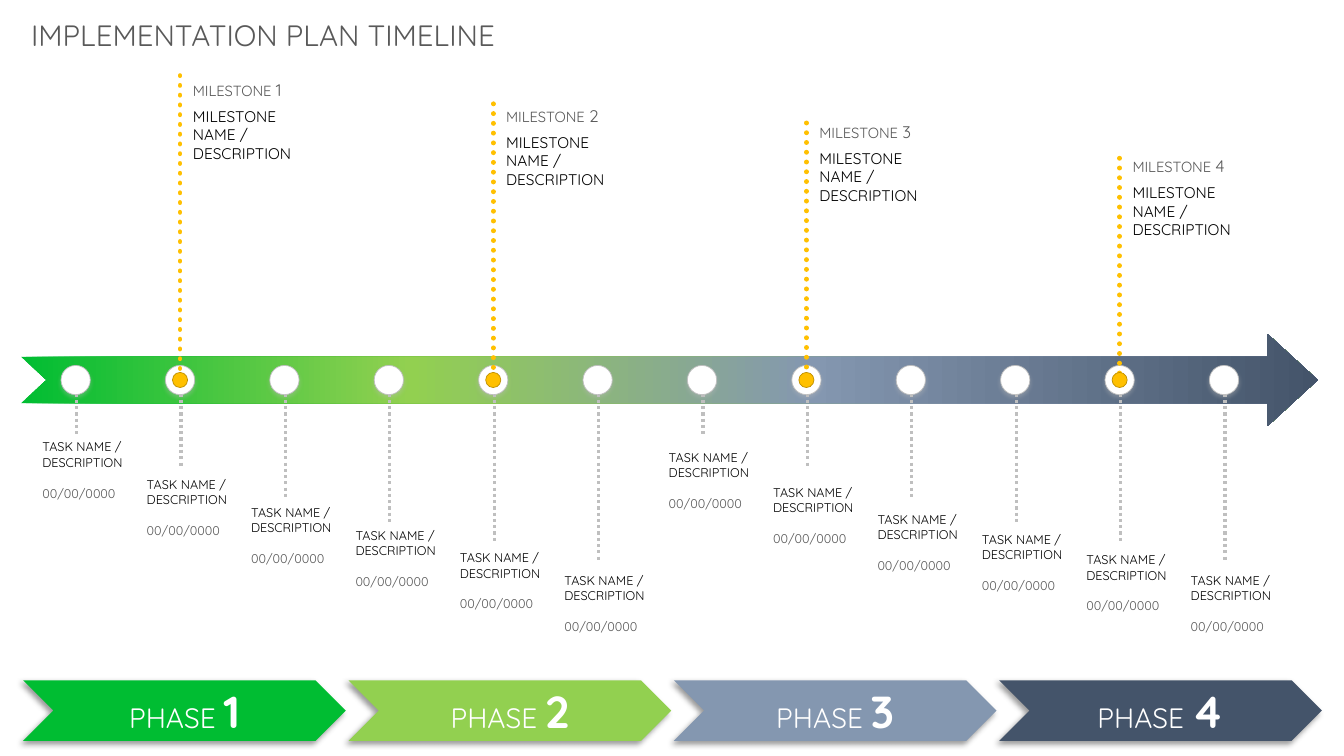
from dataclasses import dataclass
from typing import Any

from lxml import etree
from pptx import Presentation
from pptx import util as u
from pptx.dml.color import RGBColor
from pptx.enum import dml, shapes, text
from pptx.oxml.ns import qn

FONT = "Quicksand"
BLACK = RGBColor(0x00, 0x00, 0x00)
WHITE = RGBColor(0xFF, 0xFF, 0xFF)
GREY = RGBColor(0x59, 0x59, 0x59)
SILVER = RGBColor(0xBF, 0xBF, 0xBF)
GOLD = RGBColor(0xFF, 0xC0, 0x00)
DARK_GOLD = RGBColor(0xBF, 0x90, 0x00)
GREEN = RGBColor(0x00, 0xBD, 0x32)
LIME = RGBColor(0x92, 0xD0, 0x50)
STEEL = RGBColor(0x84, 0x97, 0xB0)
NAVY = RGBColor(0x44, 0x54, 0x6A)
PHASE_COLORS = [GREEN, LIME, STEEL, NAVY]
GRADIENT_STOPS = [0, 30, 61, 100]

AXIS_Y = 3.77
FIRST_TASK_X, LAST_TASK_X = 0.76, 12.15
TASK_TOPS = [4.31, 4.68, 4.96, 5.19, 5.41, 5.63, 4.41, 4.76, 5.03, 5.23, 5.43, 5.63]
STEM_ENDS = [4.33, 4.63, 4.93, 5.18, 5.38, 5.58]
TASK_STEP = (LAST_TASK_X - FIRST_TASK_X) / (len(TASK_TOPS) - 1)


@dataclass
class Span:
    text: str
    size: float
    color: RGBColor
    bold: bool = False


@dataclass
class Shadow:
    color: RGBColor
    alpha: int
    blur: float
    distance: float
    angle: int


@dataclass
class Milestone:
    line_top: float
    label_top: float
    width: float
    height: float


MILESTONES = [
    Milestone(0.75, 0.74, 1.48, 2.5),
    Milestone(1.03, 1.0, 1.46, 2.44),
    Milestone(1.22, 1.16, 1.37, 2.05),
    Milestone(1.57, 1.5, 1.37, 1.73),
]
PHASE_SHADOW = Shadow(BLACK, 40, 4, 3, 135)
MARKER_SHADOW = Shadow(SILVER, 35, 3.1, 1.8, 90)


def set_all(target: Any, values: dict[str, Any]) -> None:
    for name, value in values.items():
        setattr(target, name, value)


def write(para: Any, spans: list[Span]) -> None:
    for item in spans:
        span = para.add_run()
        span.text = item.text
        set_all(span.font, {"name": FONT, "size": u.Pt(item.size), "bold": item.bold})
        span.font.color.rgb = item.color


def add_text(parent: Any, left: float, top: float, width: float, height: float,
             paragraphs: list[list[Span]], frame_format: dict[str, Any] | None = None) -> Any:
    box = parent.add_textbox(*map(u.Inches, (left, top, width, height)))
    frame = box.text_frame
    set_all(frame, {"word_wrap": True, **(frame_format or {})})
    for index, spans in enumerate(paragraphs):
        write(frame.add_paragraph() if index else frame.paragraphs[0], spans)
    return box


def add_dotted_line(parent: Any, x: float, top: float, bottom: float,
                    color: RGBColor, width: float, cap: str) -> None:
    line = parent.add_connector(shapes.MSO_CONNECTOR.STRAIGHT,
                                *map(u.Inches, (x, top, x, bottom)))
    line.line.color.rgb = color
    set_all(line.line, {"width": u.Pt(width), "dash_style": dml.MSO_LINE.ROUND_DOT})
    properties = line.element.find(qn("p:spPr"))
    properties.find(qn("a:ln")).set("cap", cap)
    etree.SubElement(properties, qn("a:effectLst"))


def add_figure(parent: Any, kind: Any, left: float, top: float, width: float, height: float,
               fill: RGBColor, outline: RGBColor | None = None,
               shadow: Shadow | None = None) -> Any:
    figure = parent.add_shape(kind, *map(u.Inches, (left, top, width, height)))
    figure.fill.solid()
    figure.fill.fore_color.rgb = fill
    if outline is None:
        figure.line.fill.background()
    else:
        figure.line.color.rgb = outline
        figure.line.width = u.Pt(0.5)
    figure.shadow.inherit = False
    if shadow:
        effects = figure.element.find(qn("p:spPr")).find(qn("a:effectLst"))
        outer = etree.SubElement(effects, qn("a:outerShdw"), {
            "blurRad": str(u.Pt(shadow.blur)), "dist": str(u.Pt(shadow.distance)),
            "dir": str(shadow.angle * 60000), "algn": "ctr", "rotWithShape": "0"})
        color = etree.SubElement(outer, qn("a:srgbClr"), val=str(shadow.color))
        etree.SubElement(color, qn("a:alpha"), val=str(shadow.alpha * 1000))
    return figure


def add_dot(parent: Any, x: float, size: float, fill: RGBColor, outline: RGBColor,
            shadow: Shadow | None = None) -> None:
    """Centre a round marker on the timeline axis."""
    add_figure(parent, shapes.MSO_SHAPE.OVAL, x - size / 2, AXIS_Y - size / 2,
               size, size, fill, outline, shadow)


def add_phase(parent: Any, index: int) -> None:
    phase = add_figure(parent, shapes.MSO_SHAPE.CHEVRON, 0.23 + index * 3.227, 6.75, 3.2, 0.6,
                       PHASE_COLORS[index], shadow=PHASE_SHADOW)
    phase.text_frame.vertical_anchor = text.MSO_ANCHOR.MIDDLE
    para = phase.text_frame.paragraphs[0]
    para.alignment = text.PP_ALIGN.CENTER
    write(para, [Span("PHASE ", 20, WHITE), Span(str(index + 1), 32, WHITE, True)])


def add_timeline_arrow(parent: Any) -> None:
    arrow = add_figure(parent, shapes.MSO_SHAPE.NOTCHED_RIGHT_ARROW,
                       0.21, 3.31, 12.86, 0.92, GREEN)
    arrow.adjustments[0], arrow.adjustments[1] = 0.5, 0.545
    arrow.fill.gradient()
    arrow.fill.gradient_angle = 0
    stops = arrow.element.find(qn("p:spPr")).find(qn("a:gradFill")).find(qn("a:gsLst"))
    for stop in list(stops):
        stops.remove(stop)
    for position, color in zip(GRADIENT_STOPS, PHASE_COLORS):
        stop = etree.SubElement(stops, qn("a:gs"), pos=str(position * 1000))
        etree.SubElement(stop, qn("a:srgbClr"), val=str(color))


def add_task_text(parent: Any, x: float, top: float) -> None:
    margins = {"margin_left": 0, "margin_right": 0,
               "margin_top": u.Inches(0.05), "margin_bottom": u.Inches(0.01)}
    box = add_text(parent, x - 0.34, top, 0.8, 0.9,
                   [[Span("TASK NAME / DESCRIPTION", 9, BLACK)],
                    [Span("00/00/0000", 9, GREY)]], margins)
    box.text_frame.paragraphs[1].space_before = u.Pt(11.25)


def add_milestone(parent: Any, number: int, x: float, milestone: Milestone) -> None:
    group = parent.add_group_shape().shapes
    add_dotted_line(group, x, milestone.line_top, AXIS_Y, GOLD, 3.5, "rnd")
    add_dot(group, x, 0.15, GOLD, DARK_GOLD)
    add_text(group, x + 0.03, milestone.label_top, 1.17, 0.26,
             [[Span("MILESTONE", 10.5, GREY), Span(" ", 11, GREY), Span(str(number), 12, GREY)]])
    add_text(group, x + 0.03, milestone.label_top + 0.27, milestone.width, milestone.height,
             [[Span("MILESTONE NAME / DESCRIPTION", 11, BLACK)]])


def main() -> None:
    deck = Presentation()
    set_all(deck, {"slide_width": u.Inches(13.33), "slide_height": u.Inches(7.5)})
    page = deck.slides.add_slide(deck.slide_layouts[6]).shapes

    for index in range(len(PHASE_COLORS)):
        add_phase(page, index)
    add_timeline_arrow(page)

    task_xs = [FIRST_TASK_X + index * TASK_STEP for index in range(len(TASK_TOPS))]
    for x, bottom in zip(task_xs, STEM_ENDS * 2):
        add_dotted_line(page, x, 3.78, bottom, SILVER, 2.25, "flat")
    for x in task_xs:
        add_dot(page, x - 0.01, 0.29, WHITE, SILVER, MARKER_SHADOW)
    for x, top in zip(task_xs, TASK_TOPS):
        add_task_text(page, x, top)
    for number, (x, milestone) in enumerate(zip(task_xs[1::3], MILESTONES), 1):
        add_milestone(page, number, x - 0.01, milestone)

    add_text(page, 0.21, 0.12, 9.2, 0.45, [[Span("IMPLEMENTATION PLAN TIMELINE", 21, GREY)]],
             {"auto_size": text.MSO_AUTO_SIZE.SHAPE_TO_FIT_TEXT})
    deck.save("out.pptx")


if __name__ == "__main__":
    main()
